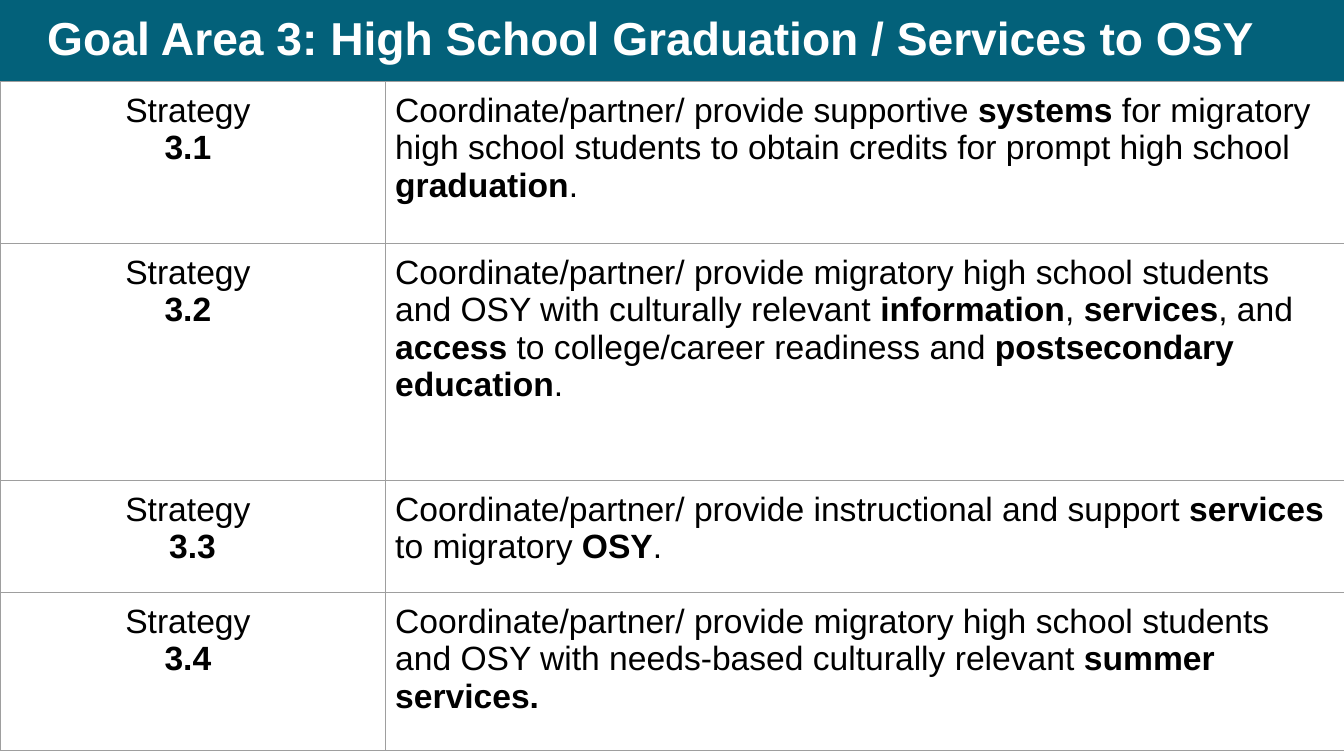
import pptx
import pptx.dml.color
import pptx.enum.shapes
import pptx.enum.text
import pptx.oxml
import pptx.oxml.ns
import pptx.util

Inches = pptx.util.Inches
Pt = pptx.util.Pt
RGBColor = pptx.dml.color.RGBColor
ALIGN = pptx.enum.text.PP_ALIGN

TEAL = RGBColor(0x03, 0x61, 0x7A)
WHITE = RGBColor(0xFF, 0xFF, 0xFF)
BLACK = RGBColor(0x00, 0x00, 0x00)
GRAY = RGBColor(0x9E, 0x9E, 0x9E)

BAND = 0.81
COLS = [3.82, 9.51]
ROWS = [1.61, 2.35, 1.11, 1.57]

# Bold words stand between asterisks
PLANS = [
    ("3.1 ", "Coordinate/partner/ provide supportive *systems *for migratory high school "
             "students to obtain credits for prompt high school *graduation*."),
    ("3.2 ", "Coordinate/partner/ provide migratory high school students and OSY with "
             "culturally relevant *information*, *services*, and *access *to "
             "college/career readiness and* postsecondary education*."),
    ("3.3", "Coordinate/partner/ provide instructional and support *services *to "
            "migratory *OSY*."),
    ("3.4 ", "Coordinate/partner/ provide migratory high school students and OSY with "
             "needs-based culturally relevant *summer services.*"),
]


class Page:
    font = "Arial"

    def __init__(self, slide):
        self.slide = slide

    def run(self, para, text, size, color, bold=False):
        run = para.add_run()
        run.text = text
        run.font.name = self.font
        run.font.size = Pt(size)
        run.font.color.rgb = color
        run.font.bold = bold

    def band(self, width, height, color):
        rect = self.slide.shapes.add_shape(
            pptx.enum.shapes.MSO_SHAPE.RECTANGLE, 0, 0, Inches(width), Inches(height))
        rect.shadow.inherit = False
        rect.fill.solid()
        rect.fill.fore_color.rgb = color
        rect.line.fill.background()

    def title(self, text, left, top, width, height):
        box = self.slide.shapes.add_textbox(
            Inches(left), Inches(top), Inches(width), Inches(height))
        frame = box.text_frame
        frame.word_wrap = True
        frame.vertical_anchor = pptx.enum.text.MSO_ANCHOR.MIDDLE
        para = frame.paragraphs[0]
        para.line_spacing = 0.9
        self.run(para, text, 33, WHITE, True)

    def table(self, left, top, cols, rows):
        table = self.slide.shapes.add_table(
            len(rows), len(cols), Inches(left), Inches(top),
            Inches(sum(cols)), Inches(sum(rows))).table
        table.first_row = table.horz_banding = False
        for col, width in zip(table.columns, cols):
            col.width = Inches(width)
        for row, height in zip(table.rows, rows):
            row.height = Inches(height)
        for cell in table.iter_cells():
            self.cell(cell)
        return table

    def cell(self, cell):
        cell.margin_left = cell.margin_right = Inches(0.1)
        cell.margin_top = cell.margin_bottom = Inches(0.1)
        cell.fill.background()
        props = cell._tc.get_or_add_tcPr()
        for spot, side in enumerate("LRTB"):
            props.insert(spot, pptx.oxml.parse_xml(
                f'<a:ln{side} {pptx.oxml.ns.nsdecls("a")} w="{Pt(0.75)}">'
                f'<a:solidFill><a:srgbClr val="{GRAY}"/></a:solidFill></a:ln{side}>'))

    def label(self, cell, number):
        para = cell.text_frame.paragraphs[0]
        para.alignment = ALIGN.CENTER
        self.run(para, "Strategy ", 24, BLACK)
        para.add_line_break()
        self.run(para, number, 24, BLACK, True)

    def plan(self, cell, text):
        para = cell.text_frame.paragraphs[0]
        for spot, part in enumerate(text.split("*")):
            if part:
                self.run(para, part, 24, BLACK, spot % 2 == 1)


def main():
    deck = pptx.Presentation()
    deck.slide_width = Inches(13.33)
    deck.slide_height = Inches(7.5)
    page = Page(deck.slides.add_slide(deck.slide_layouts[6]))

    # Header
    page.band(13.33, BAND, TEAL)

    # Strategies
    table = page.table(0, BAND, COLS, ROWS)
    for row, (number, text) in enumerate(PLANS):
        page.label(table.cell(row, 0), number)
        page.plan(table.cell(row, 1), text)

    # Title
    page.title("Goal Area 3: High School Graduation / Services to OSY",
               0.37, 0, 12.32, BAND)

    deck.save("out.pptx")


if __name__ == "__main__":
    main()
